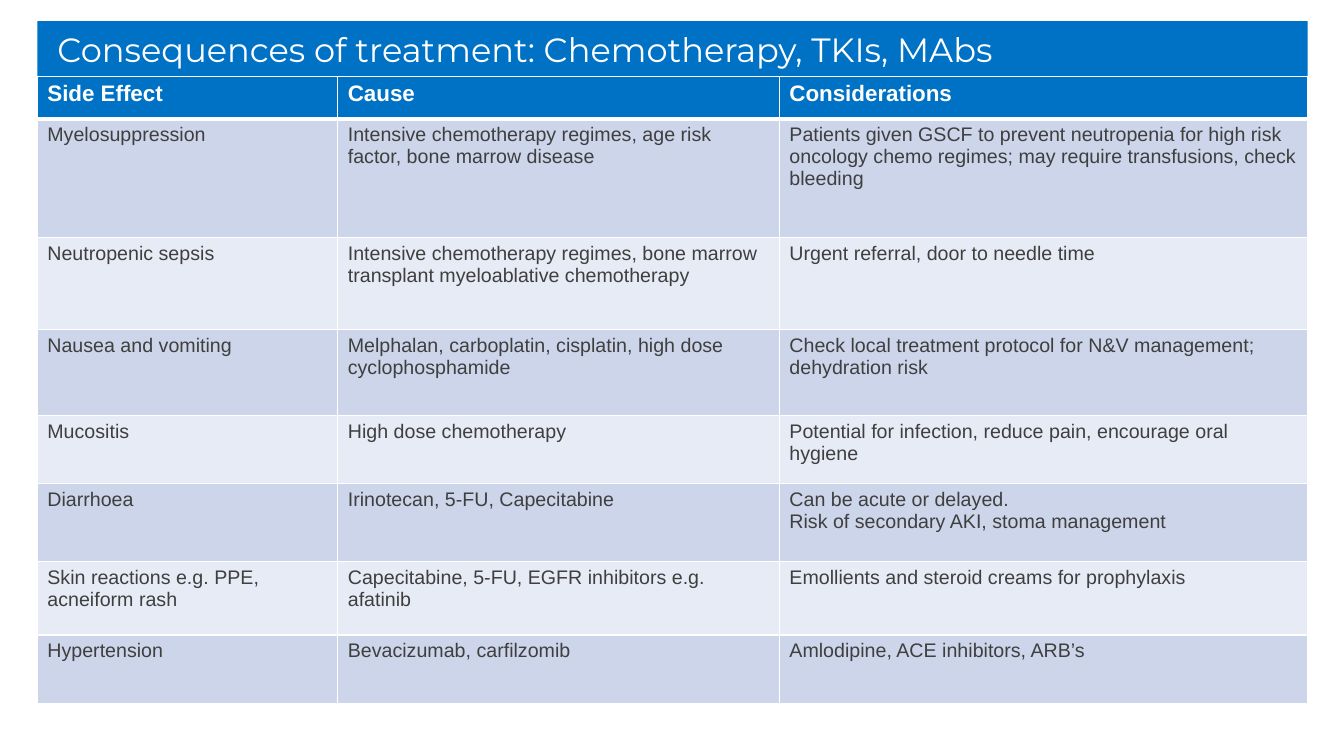
from dataclasses import dataclass

from lxml.etree import SubElement
from pptx import Presentation
from pptx.dml.color import RGBColor
from pptx.enum.text import MSO_ANCHOR, MSO_AUTO_SIZE, PP_ALIGN
from pptx.oxml.ns import qn
from pptx.slide import Slide
from pptx.table import _Cell
from pptx.text.text import TextFrame
from pptx.util import Emu, Pt

EMU_PER_PX = 9144  # 100 px to the inch

BLUE = "0072C6"
WHITE = "FFFFFF"
DARK_GREY = "3F3F3F"
BAND_FILLS = ("CCD5EA", "E7EBF5")

LEFT, TITLE_TOP, WIDTH, TITLE_HEIGHT = 37, 21, 1260, 55
COLUMN_WIDTHS = (298, 438, 524)
HEADER_HEIGHT = 42
HEADINGS = ("Side Effect", "Cause", "Considerations")


@dataclass(frozen=True)
class SideEffect:
    name: str
    cause: str
    considerations: str
    height: int


SIDE_EFFECTS = (
    SideEffect(
        "Myelosuppression",
        "Intensive chemotherapy regimes, age risk factor, bone marrow disease",
        "Patients given GSCF to prevent neutropenia for high risk oncology chemo regimes; "
        "may require transfusions, check bleeding",
        118,
    ),
    SideEffect(
        "Neutropenic sepsis",
        "Intensive chemotherapy regimes, bone marrow transplant myeloablative chemotherapy",
        "Urgent referral, door to needle time",
        91,
    ),
    SideEffect(
        "Nausea and vomiting",
        "Melphalan, carboplatin, cisplatin, high dose cyclophosphamide",
        "Check local treatment protocol for N&V management; dehydration risk",
        85,
    ),
    SideEffect(
        "Mucositis",
        "High dose chemotherapy",
        "Potential for infection, reduce pain, encourage oral hygiene",
        68,
    ),
    SideEffect(
        "Diarrhoea",
        "Irinotecan, 5-FU, Capecitabine",
        "Can be acute or delayed.\nRisk of secondary AKI, stoma management",
        77,
    ),
    SideEffect(
        "Skin reactions e.g. PPE, acneiform rash",
        "Capecitabine, 5-FU, EGFR inhibitors e.g. afatinib",
        "Emollients and steroid creams for prophylaxis",
        73,
    ),
    SideEffect(
        "Hypertension",
        "Bevacizumab, carfilzomib",
        "Amlodipine, ACE inhibitors, ARB’s",
        68,
    ),
)


def px(length: int) -> Emu:
    return Emu(length * EMU_PER_PX)


def color(value: str) -> RGBColor:
    return RGBColor.from_string(value)


def write_text(
    frame: TextFrame,
    text: str,
    *,
    size: int,
    fill: str,
    font: str = "Arial",
    bold: bool = False,
    indent: int = 0,
) -> None:
    """Fill the frame with one left-aligned paragraph per line of text."""
    frame.text = text
    frame.word_wrap = True
    for paragraph in frame.paragraphs:
        paragraph.alignment = PP_ALIGN.LEFT
        if indent:
            properties = paragraph._p.get_or_add_pPr()
            properties.set("marL", str(px(indent)))
            properties.set("indent", "0")
        for run in paragraph.runs:
            run.font.name = font
            run.font.size = Pt(size)
            run.font.bold = bold
            run.font.color.rgb = color(fill)


def add_borders(cell: _Cell, top: int, bottom: int) -> None:
    """Draw white borders; top and bottom are widths in points."""
    properties = cell._tc.get_or_add_tcPr()
    edges = (("a:lnL", 1), ("a:lnR", 1), ("a:lnT", top), ("a:lnB", bottom))
    for position, (tag, width) in enumerate(edges):
        line = SubElement(properties, qn(tag), w=str(Pt(width)))
        SubElement(SubElement(line, qn("a:solidFill")), qn("a:srgbClr"), val=WHITE)
        properties.insert(position, line)


def add_title(slide: Slide, text: str) -> None:
    title = slide.shapes.title
    title.left, title.top = px(LEFT), px(TITLE_TOP)
    title.width, title.height = px(WIDTH), px(TITLE_HEIGHT)
    title.fill.solid()
    title.fill.fore_color.rgb = color(BLUE)
    frame = title.text_frame
    frame.auto_size = MSO_AUTO_SIZE.NONE
    frame.vertical_anchor = MSO_ANCHOR.MIDDLE
    write_text(frame, text, size=24, fill=WHITE, font="Montserrat", indent=10)


def add_side_effect_table(slide: Slide) -> None:
    heights = [HEADER_HEIGHT] + [effect.height for effect in SIDE_EFFECTS]
    table = slide.shapes.add_table(
        len(heights), len(COLUMN_WIDTHS),
        px(LEFT), px(TITLE_TOP + TITLE_HEIGHT), px(WIDTH), px(sum(heights)),
    ).table
    for column, width in zip(table.columns, COLUMN_WIDTHS):
        column.width = px(width)

    rows = [HEADINGS] + [(effect.name, effect.cause, effect.considerations) for effect in SIDE_EFFECTS]
    for index, (row, height, texts) in enumerate(zip(table.rows, heights, rows)):
        row.height = px(height)
        is_header = index == 0
        for cell, text in zip(row.cells, texts):
            cell.fill.solid()
            cell.fill.fore_color.rgb = color(BLUE if is_header else BAND_FILLS[(index - 1) % 2])
            add_borders(cell, top=3 if index == 1 else 1, bottom=3 if is_header else 1)
            write_text(
                cell.text_frame,
                text,
                size=16 if is_header else 14,
                fill=WHITE if is_header else DARK_GREY,
                bold=is_header,
            )


def main() -> None:
    presentation = Presentation()
    presentation.slide_width, presentation.slide_height = px(1333), px(750)
    slide = presentation.slides.add_slide(presentation.slide_layouts.get_by_name("Title Only"))
    add_title(slide, "Consequences of treatment: Chemotherapy, TKIs, MAbs")
    add_side_effect_table(slide)
    presentation.save("out.pptx")


if __name__ == "__main__":
    main()
